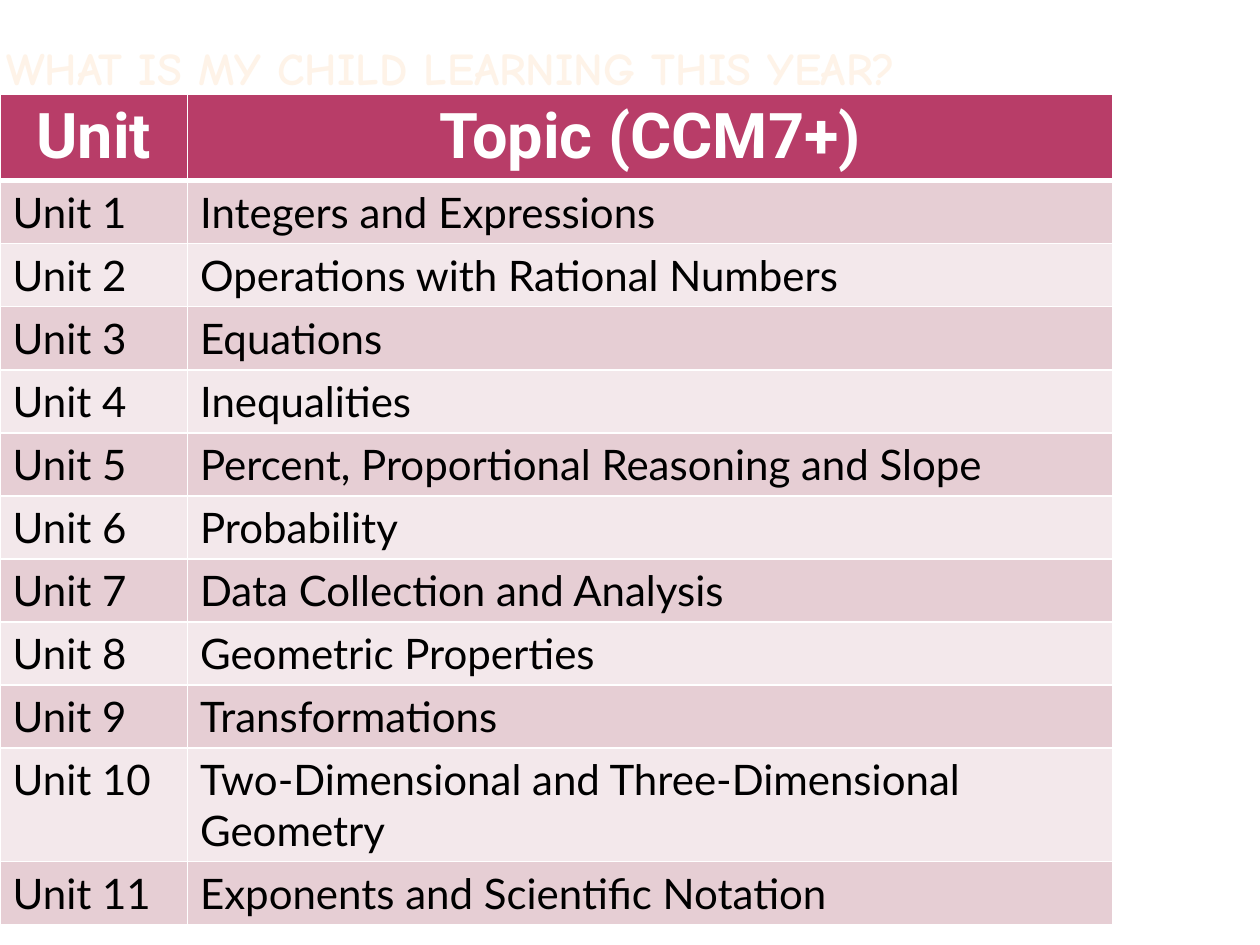
import pptx
import pptx.dml.color
import pptx.enum.text
import pptx.oxml
import pptx.oxml.ns
import pptx.util
from pptx.util import Cm

TITLE = "WHAT IS MY CHILD LEARNING THIS YEAR?"
HEADINGS = ("Unit", "Topic (CCM7+)")
TOPICS = [
    "Integers and Expressions",
    "Operations with Rational Numbers",
    "Equations",
    "Inequalities",
    "Percent, Proportional Reasoning and Slope",
    "Probability",
    "Data Collection and Analysis",
    "Geometric Properties",
    "Transformations",
    "Two-Dimensional and Three-Dimensional Geometry",
    "Exponents and Scientific Notation",
]
ROWS = [HEADINGS] + [(f"Unit {number}", topic) for number, topic in enumerate(TOPICS, 1)]
COLUMN_WIDTHS = (Cm(3.78), Cm(18.66))
HEADER_HEIGHT, ROW_HEIGHT = Cm(1.32), Cm(1.22)
HEADER_FILL = "B83D68"
BAND_FILLS = ("F3E8EB", "E6CED4")
ALIGN = pptx.enum.text.PP_ALIGN


def paint(fill, colour):
    fill.solid()
    fill.fore_color.rgb = pptx.dml.color.RGBColor.from_string(colour)


def write(frame, text, font, size, colour, bold, align):
    para = frame.paragraphs[0]
    para.alignment = align
    span = para.add_run()
    span.text = text
    span.font.name = font
    span.font.size = pptx.util.Pt(size)
    span.font.bold = bold
    paint(span.font.fill, colour)


def add_borders(cell, widths):
    properties = cell._tc.get_or_add_tcPr()
    for side, width in widths.items():
        properties.append(pptx.oxml.parse_xml(
            f'<a:ln{side} {pptx.oxml.ns.nsdecls("a")} w="{pptx.util.Pt(width)}">'
            f'<a:solidFill><a:srgbClr val="FFFFFF"/></a:solidFill></a:ln{side}>'))


def add_title(page):
    box = page.shapes.title
    box.left, box.top, box.width, box.height = Cm(0), Cm(0), Cm(24.33), Cm(1.9)
    frame = box.text_frame
    frame.word_wrap = True
    frame.auto_size = pptx.enum.text.MSO_AUTO_SIZE.NONE
    frame.vertical_anchor = pptx.enum.text.MSO_ANCHOR.BOTTOM
    frame.margin_left = frame.margin_right = Cm(0.13)
    frame.margin_top = frame.margin_bottom = Cm(0)
    write(frame, TITLE, "Comic Neue", 26, "FEF3E8", True, ALIGN.LEFT)


def add_units(page):
    height = HEADER_HEIGHT + ROW_HEIGHT * len(TOPICS)
    table = page.shapes.add_table(len(ROWS), len(HEADINGS), Cm(0), Cm(1.9),
                                  sum(COLUMN_WIDTHS), height).table
    for column, width in zip(table.columns, COLUMN_WIDTHS):
        column.width = width
    for index, texts in enumerate(ROWS):
        header = index == 0
        table.rows[index].height = HEADER_HEIGHT if header else ROW_HEIGHT
        borders = {"L": 1, "R": 1, "T": 3 if index == 1 else 1, "B": 3 if header else 1}
        for cell, text in zip(table.rows[index].cells, texts):
            add_borders(cell, borders)
            if header:
                paint(cell.fill, HEADER_FILL)
                write(cell.text_frame, text, "Roboto", 36, "FFFFFF", True, ALIGN.CENTER)
            else:
                paint(cell.fill, BAND_FILLS[index % 2])
                write(cell.text_frame, text, "Lato", 24, "000000", False, ALIGN.LEFT)


def main():
    deck = pptx.Presentation()
    deck.slide_width, deck.slide_height = Cm(25.4), Cm(19.05)
    page = deck.slides.add_slide(deck.slide_layouts[5])
    paint(page.background.fill, "FFFFFF")
    add_title(page)
    add_units(page)
    deck.save("out.pptx")


if __name__ == "__main__":
    main()
